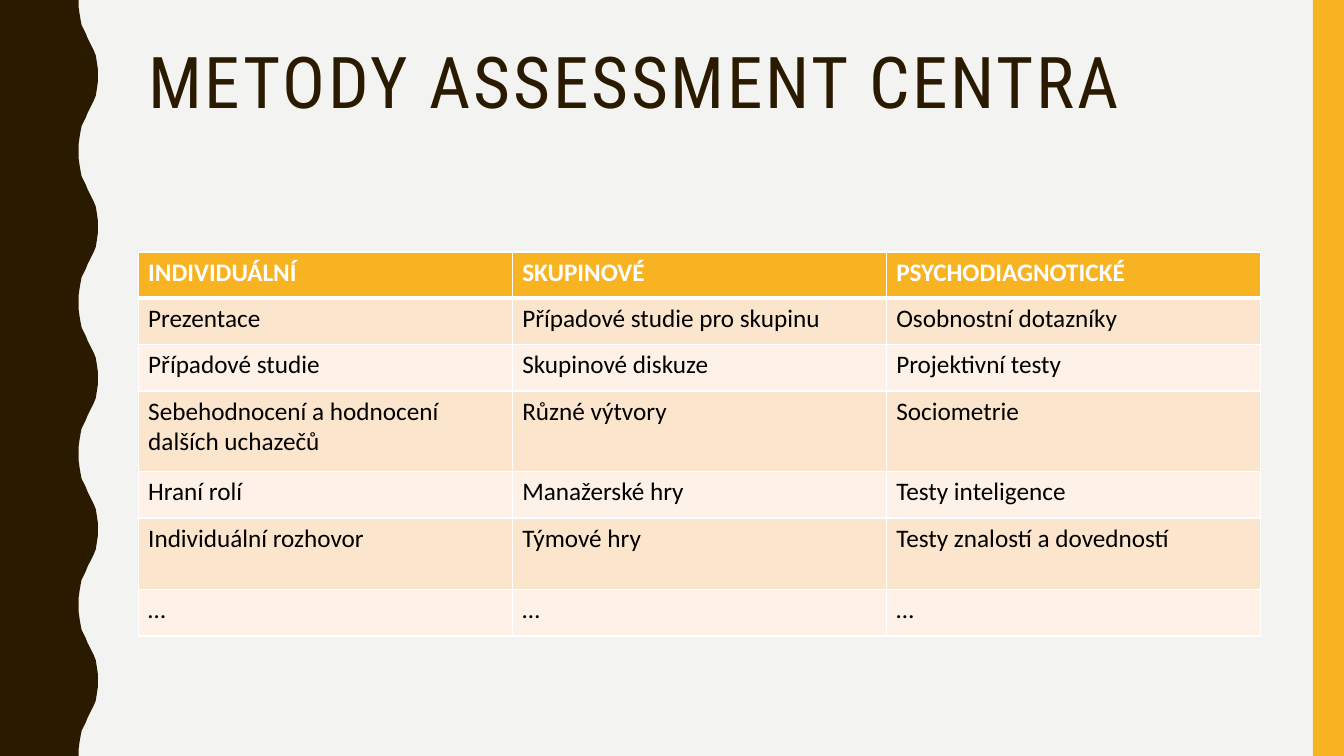
import pptx
import pptx.util
import pptx.dml.color
import pptx.enum.shapes
import pptx.enum.text
import pptx.oxml
import pptx.oxml.ns

Inches = pptx.util.Inches
Pt = pptx.util.Pt
RGBColor = pptx.dml.color.RGBColor

PAPER = RGBColor(0xF3, 0xF3, 0xF2)
BROWN = RGBColor(0x2A, 0x1A, 0x00)
GOLD = RGBColor(0xF8, 0xB3, 0x23)
PEACH = RGBColor(0xFC, 0xE5, 0xCD)
CREAM = RGBColor(0xFE, 0xF2, 0xE8)
WHITE = RGBColor(0xFF, 0xFF, 0xFF)
BLACK = RGBColor(0x00, 0x00, 0x00)

WIDTH, HEIGHT = 13.33, 7.5
WAVES = 5
CURVE = [
    (0.78, 0), (0.78, 0.07), (0.79, 0.14), (0.8, 0.2), (0.81, 0.25),
    (0.83, 0.29), (0.85, 0.33), (0.87, 0.38), (0.89, 0.42), (0.91, 0.46),
    (0.93, 0.5), (0.95, 0.55), (0.96, 0.61), (0.97, 0.68), (0.97, 0.75),
]
ROWS = [
    ("INDIVIDUÁLNÍ", "SKUPINOVÉ", "PSYCHODIAGNOTICKÉ"),
    ("Prezentace", "Případové studie pro skupinu", "Osobnostní dotazníky"),
    ("Případové studie", "Skupinové diskuze", "Projektivní testy"),
    ("Sebehodnocení a hodnocení dalších uchazečů", "Různé výtvory", "Sociometrie"),
    ("Hraní rolí", "Manažerské hry", "Testy inteligence"),
    ("Individuální rozhovor", "Týmové hry", "Testy znalostí a dovedností"),
    ("…", "…", "…"),
]
HEIGHTS = [0.46, 0.46, 0.46, 0.8, 0.46, 0.71, 0.46]


def paint(shape, color):
    """Give a shape a plain fill with no line or shadow."""
    shape.shadow.inherit = False
    shape.fill.solid()
    shape.fill.fore_color.rgb = color
    shape.line.fill.background()


def style(para, face, size, color, bold=False):
    """Format the runs of a paragraph."""
    for run in para.runs:
        run.font.name = face
        run.font.size = Pt(size)
        run.font.bold = bold
        run.font.color.rgb = color


def add_wave(slide, left, top, height):
    """Draw the brown band with its wavy right edge."""
    step = height / WAVES
    period = CURVE + [(x, step - y) for x, y in CURVE[-2:0:-1]]
    edge = [(x, y + step * i) for i in range(WAVES) for x, y in period]
    edge += [(CURVE[0][0], height), (0, height)]
    points = [(Inches(left + x), Inches(top + y)) for x, y in edge]
    form = slide.shapes.build_freeform(Inches(left), Inches(top))
    form.add_line_segments(points, close=True)
    paint(form.convert_to_shape(), BROWN)


def add_stripe(slide, left, top, width, height):
    """Draw the gold stripe."""
    kind = pptx.enum.shapes.MSO_SHAPE.RECTANGLE
    box = map(Inches, (left, top, width, height))
    paint(slide.shapes.add_shape(kind, *box), GOLD)


def add_title(slide, left, top, width, height):
    """Write the slide title."""
    box = slide.shapes.add_textbox(*map(Inches, (left, top, width, height)))
    frame = box.text_frame
    frame.word_wrap = True
    frame.vertical_anchor = pptx.enum.text.MSO_ANCHOR.TOP
    frame.text = "METODY ASSESSMENT CENTRA"
    para = frame.paragraphs[0]
    para.line_spacing = 0.9
    style(para, "Roboto Condensed", 51, BROWN)
    para.runs[0].font._element.set("spc", "200")


def add_rules(cell, head):
    """Draw white borders round a cell, thicker below the header."""
    props = cell._tc.get_or_add_tcPr()
    for side in "LRTB":
        width = Pt(3 if head and side == "B" else 1)
        props.append(pptx.oxml.parse_xml(
            f'<a:ln{side} {pptx.oxml.ns.nsdecls("a")} w="{width}">'
            f'<a:solidFill><a:srgbClr val="{WHITE}"/></a:solidFill></a:ln{side}>'
        ))


def add_grid(slide, left, top, width):
    """Build the table of methods."""
    count = len(ROWS[0])
    box = map(Inches, (left, top, width, sum(HEIGHTS)))
    table = slide.shapes.add_table(len(ROWS), count, *box).table
    for col in table.columns:
        col.width = Inches(width / count)
    for i, (row, height) in enumerate(zip(ROWS, HEIGHTS)):
        head = i == 0
        table.rows[i].height = Inches(height)
        for j, text in enumerate(row):
            cell = table.cell(i, j)
            cell.text_frame.text = text
            color = WHITE if head else BLACK
            style(cell.text_frame.paragraphs[0], "Calibri", 18, color, head)
            add_rules(cell, head)
            cell.fill.solid()
            cell.fill.fore_color.rgb = GOLD if head else PEACH if i % 2 else CREAM


def main():
    """Build and save the slide."""
    deck = pptx.Presentation()
    deck.slide_width = Inches(WIDTH)
    deck.slide_height = Inches(HEIGHT)
    slide = deck.slides.add_slide(deck.slide_layouts[6])
    slide.background.fill.solid()
    slide.background.fill.fore_color.rgb = PAPER
    add_wave(slide, 0, 0, HEIGHT)
    add_stripe(slide, 13.02, 0, 0.31, HEIGHT)
    add_title(slide, 1.37, 0.42, 11.13, 1.63)
    add_grid(slide, 1.37, 2.5, 11.13)
    deck.save("out.pptx")


if __name__ == "__main__":
    main()
